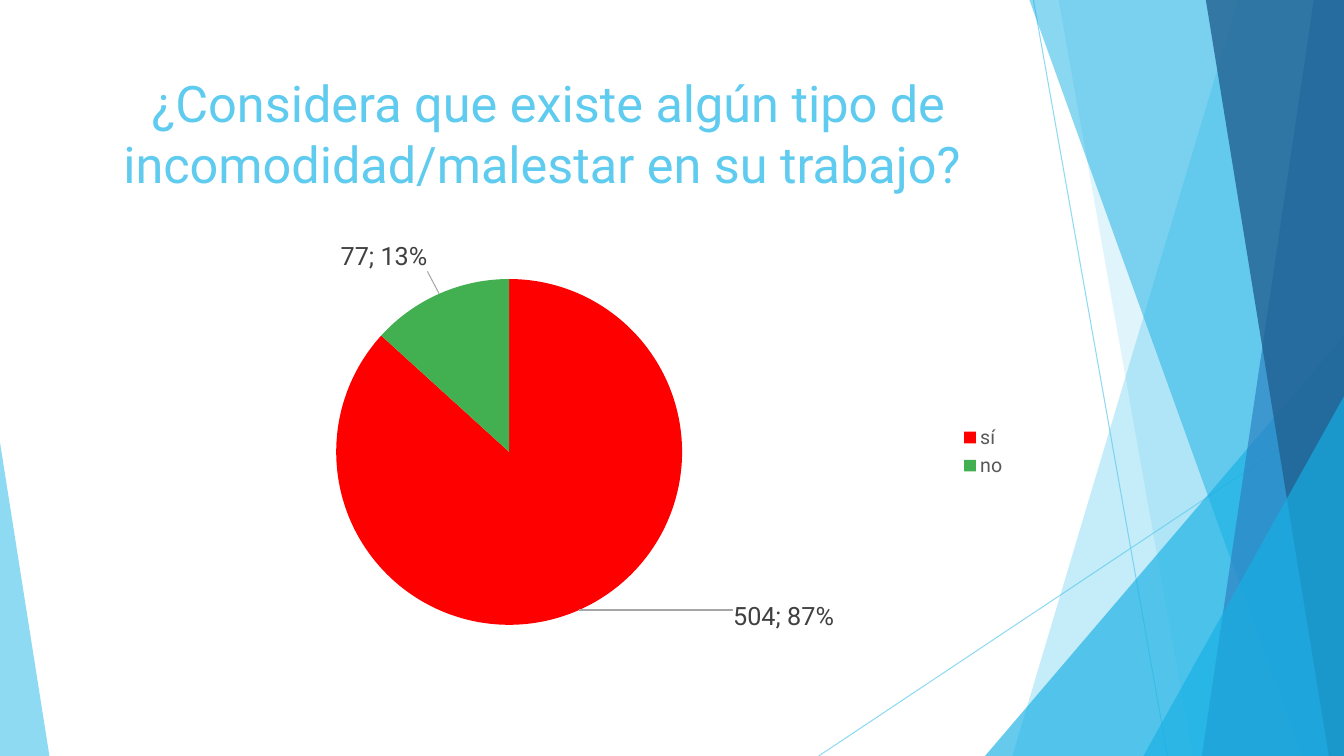
import pptx
import pptx.chart.data
import pptx.dml.color
import pptx.enum.chart
import pptx.enum.shapes
import pptx.enum.text
import pptx.oxml
import pptx.oxml.ns
import pptx.util

Inches = pptx.util.Inches
Pt = pptx.util.Pt
RGB = pptx.dml.color.RGBColor
qn = pptx.oxml.ns.qn

W, H = 13.33, 7.5
FONT = "Roboto"
SKY = RGB(0x5F, 0xCB, 0xEF)
CYAN = RGB(0x17, 0xB0, 0xE4)
BLUE = RGB(0x2E, 0x83, 0xC3)
NAVY = RGB(0x22, 0x62, 0x92)
RED = RGB(0xFF, 0x00, 0x00)
GREEN = RGB(0x42, 0xB0, 0x51)
GREY = RGB(0x59, 0x59, 0x59)
DARK = RGB(0x40, 0x40, 0x40)

TITLE = "¿Considera que existe algún tipo de incomodidad/malestar en su trabajo? "
ANSWERS = [("sí", 504, RED, (0.16, -0.03)), ("no ", 77, GREEN, (-0.01, -0.04))]
LINES = [((10.25, 0), (11.58, H)), ((W, 4.03), (8.12, H))]
FACETS = [
    ("band", 12.28, 10.04, SKY, 36),
    ("band", 10.5, 11.83, SKY, 20),
    ("triangle", (9.77, 3.33, 3.56), 1, CYAN, 66),
    ("band", 10.21, 12.91, CYAN, 50),
    ("band", 13.03, 11.92, BLUE, 70),
    ("band", 11.96, 13.18, NAVY, 80),
    ("triangle", (11.34, 3.93, 1.99), 1, CYAN, 66),
    ("triangle", (0, 4.39, 0.49), 0, SKY, 70),
]
PLOT = {"x": 0.276, "y": 0.096, "w": 0.365, "h": 0.81}


def set_text(tf, text, size, color, align):
    p = tf.paragraphs[0]
    p.alignment = align
    r = p.add_run()
    r.text = text
    set_font(r.font, size, color)


def set_font(font, size, color):
    font.name, font.size = FONT, Pt(size)
    font.color.rgb = color


def set_alpha(fmt, percent):
    clr = fmt._xPr.find(".//" + qn("a:srgbClr"))
    clr.append(pptx.oxml.parse_xml(
        f'<a:alpha {pptx.oxml.ns.nsdecls("a")} val="{percent * 1000}"/>'))


def chart_xml(body):
    head, rest = body.split(">", 1)
    slash = "/" if head.endswith("/") else ""
    head = head.rstrip("/")
    return pptx.oxml.parse_xml(f'{head} {pptx.oxml.ns.nsdecls("c", "a")}{slash}>{rest}')


def manual_layout(values, inner=False):
    modes = ""
    if inner:
        modes = ('<c:layoutTarget val="inner"/><c:xMode val="edge"/>'
                 '<c:yMode val="edge"/>')
    sizes = "".join(f'<c:{k} val="{v}"/>' for k, v in values.items())
    return f"<c:layout><c:manualLayout>{modes}{sizes}</c:manualLayout></c:layout>"


def add_line(s, start, end):
    line = s.shapes.add_connector(pptx.enum.shapes.MSO_CONNECTOR.STRAIGHT,
                                  *map(Inches, start + end))
    line.line.color.rgb = SKY
    line.line.width = Pt(0.75)
    spPr = line._element.spPr
    clr = spPr.find(".//" + qn("a:srgbClr"))
    clr.append(pptx.oxml.parse_xml(
        f'<a:alpha {pptx.oxml.ns.nsdecls("a")} val="70000"/>'))
    spPr.append(pptx.oxml.parse_xml(f'<a:effectLst {pptx.oxml.ns.nsdecls("a")}/>'))


def add_facet(s, kind, a, b, color, opacity):
    if kind == "band":
        fb = s.shapes.build_freeform(Inches(a), 0, scale=1.0)
        corners = [(W, 0), (W, H), (b, H)]
        fb.add_line_segments([(Inches(x), Inches(y)) for x, y in corners], close=True)
        sp = fb.convert_to_shape()
    else:
        x, y, w = a
        sp = s.shapes.add_shape(pptx.enum.shapes.MSO_SHAPE.ISOSCELES_TRIANGLE,
                                *map(Inches, (x, y, w, H - y)))
        sp.adjustments[0] = b
    sp.shadow.inherit = False
    sp.line.fill.background()
    sp.fill.solid()
    sp.fill.fore_color.rgb = color
    clr = sp._element.spPr.find(".//" + qn("a:srgbClr"))
    clr.append(pptx.oxml.parse_xml(
        f'<a:alpha {pptx.oxml.ns.nsdecls("a")} val="{opacity * 1000}"/>'))


def add_pie(s):
    data = pptx.chart.data.CategoryChartData()
    data.categories = [a[0] for a in ANSWERS]
    data.add_series("Series 1", [a[1] for a in ANSWERS])
    box = map(Inches, (0.74, 2.36, 9.4, 4.24))
    chart = s.shapes.add_chart(pptx.enum.chart.XL_CHART_TYPE.PIE, *box, data).chart
    set_font(chart.font, 18, RGB(0, 0, 0))
    chart.has_title = False
    chart.has_legend = True
    chart.legend.position = pptx.enum.chart.XL_LEGEND_POSITION.RIGHT
    chart.legend.include_in_layout = False
    set_font(chart.legend.font, 14, GREY)

    plot = chart.plots[0]
    plot.vary_by_categories = True
    series = plot.series[0]
    for i, (_, _, color, _) in enumerate(ANSWERS):
        fill = series.points[i].format.fill
        fill.solid()
        fill.fore_color.rgb = color

    labels = series.data_labels
    set_font(labels.font, 18, DARK)
    shows = {"LegendKey": 0, "Val": 1, "CatName": 0, "SerName": 0,
             "Percent": 1, "BubbleSize": 0}
    flags = '<c:dLblPos val="bestFit"/>' + "".join(
        f'<c:show{k} val="{v}"/>' for k, v in shows.items())
    flags += "<c:separator>; </c:separator>"
    dLbls = labels._element
    txPr = dLbls.find(qn("c:txPr"))
    for el in list(dLbls)[dLbls.index(txPr) + 1:]:
        dLbls.remove(el)
    leader = ('<c:showLeaderLines val="1"/><c:leaderLines><c:spPr><a:ln w="9525">'
              f'<a:solidFill><a:srgbClr val="A6A6A6"/></a:solidFill></a:ln></c:spPr>'
              "</c:leaderLines>")
    for el in list(chart_xml(f"<c:dLbls>{flags}{leader}</c:dLbls>")):
        dLbls.append(el)
    for i, (_, _, _, (dx, dy)) in enumerate(ANSWERS):
        offset = manual_layout({"x": dx, "y": dy})
        dLbls.insert(i, chart_xml(f'<c:dLbl><c:idx val="{i}"/>{offset}{flags}</c:dLbl>'))

    area = chart._chartSpace.chart.plotArea
    for old in area.findall(qn("c:layout")):
        area.remove(old)
    holder = chart_xml(f"<c:plotArea>{manual_layout(PLOT, inner=True)}</c:plotArea>")
    area.insert(0, holder[0])


def main():
    prs = pptx.Presentation()
    prs.slide_width, prs.slide_height = Inches(W), Inches(H)
    s = prs.slides.add_slide(prs.slide_layouts[5])
    for start, end in LINES:
        add_line(s, start, end)
    for facet in FACETS:
        add_facet(s, *facet)

    title = s.shapes.title
    s.shapes._spTree.append(title._element)
    title.left, title.top, title.width, title.height = map(
        Inches, (0.74, 0.67, 9.4, 1.44))
    tf = title.text_frame
    tf.word_wrap = True
    tf.auto_size = pptx.enum.text.MSO_AUTO_SIZE.NONE
    tf.vertical_anchor = pptx.enum.text.MSO_ANCHOR.TOP
    set_text(tf, TITLE, 36, SKY, pptx.enum.text.PP_ALIGN.CENTER)
    add_pie(s)
    prs.save("out.pptx")


if __name__ == "__main__":
    main()
